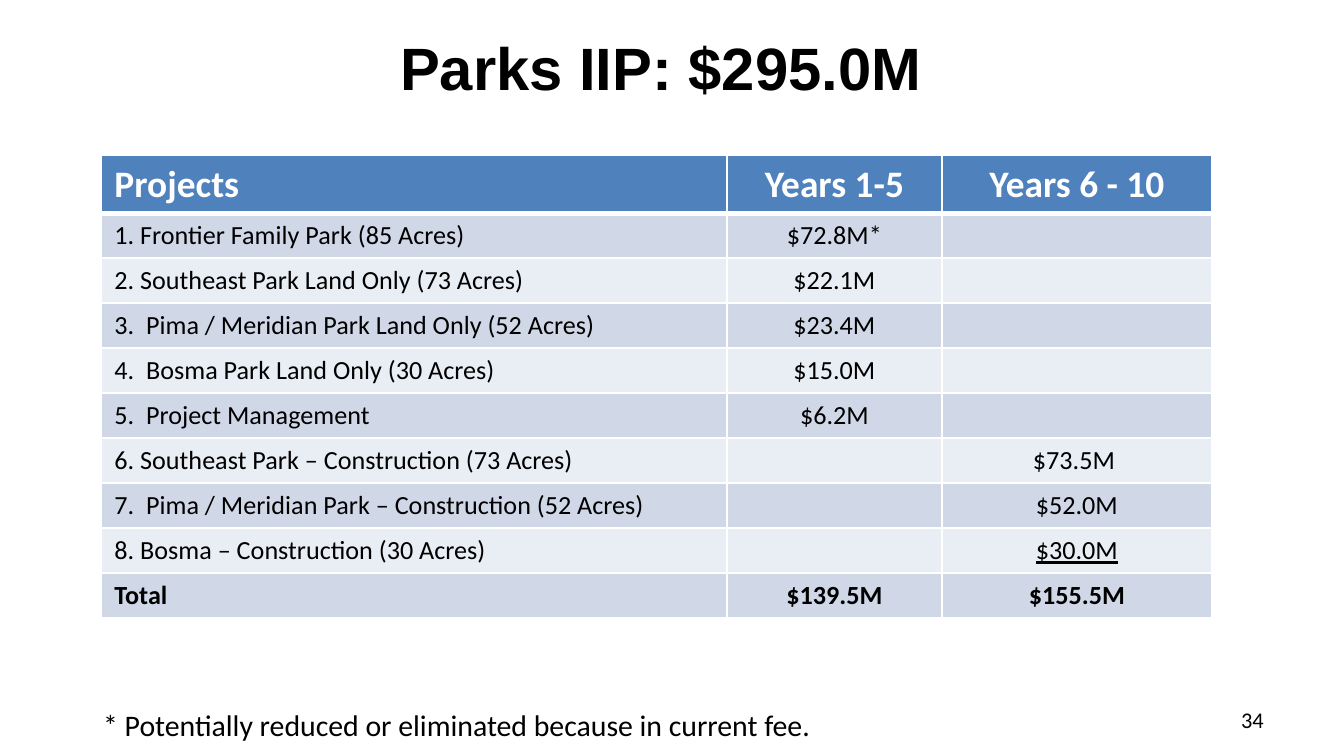
from lxml.etree import SubElement
from pptx import Presentation
from pptx.dml.color import RGBColor
from pptx.enum.text import MSO_ANCHOR, PP_ALIGN
from pptx.oxml.ns import qn
from pptx.util import Emu, Pt

EMU_PER_INCH = 914400
PX_PER_INCH = 134.4

BLACK, WHITE = "000000", "FFFFFF"
HEADER_BLUE = "4F81BD"
BANDS = ("D0D8E8", "E9EDF4")

HEADER_SIZE, PROJECT_SIZE = 20, 14
COLUMN_WIDTHS = (626, 215, 270)
HEADER_HEIGHT, PROJECT_HEIGHT = 58, 45

PROJECTS = [
    ("Projects", "Years 1-5", "Years 6 - 10"),
    ("1. Frontier Family Park (85 Acres)", "$72.8M*", ""),
    ("2. Southeast Park Land Only (73 Acres)", "$22.1M", ""),
    ("3.  Pima / Meridian Park Land Only (52 Acres)", "$23.4M", ""),
    ("4.  Bosma Park Land Only (30 Acres)", "$15.0M", ""),
    ("5.  Project Management", "$6.2M", ""),
    ("6. Southeast Park – Construction (73 Acres)", "", "$73.5M "),
    ("7.  Pima / Meridian Park – Construction (52 Acres)", "", "$52.0M"),
    ("8. Bosma – Construction (30 Acres)", "", "$30.0M"),
    ("Total", "$139.5M", "$155.5M"),
]
TOTAL_ROW = len(PROJECTS) - 1


def px(length):
    return Emu(round(length * EMU_PER_INCH / PX_PER_INCH))


def rgb(color):
    return RGBColor.from_string(color)


def add_run(paragraph, text, size, color=BLACK, bold=False, font="Calibri"):
    run = paragraph.add_run()
    run.text = text
    run.font.name = font
    run.font.size = Pt(size)
    run.font.bold = bold
    run.font.color.rgb = rgb(color)
    return run


def add_title(slide, text):
    title = slide.shapes.title
    title.left, title.top, title.width, title.height = px(34), px(4), px(1254), px(126)
    title.text_frame.vertical_anchor = MSO_ANCHOR.MIDDLE
    paragraph = title.text_frame.paragraphs[0]
    paragraph.alignment = PP_ALIGN.CENTER
    add_run(paragraph, text, 32, bold=True, font="Arial")


def add_label(slide, text, left, top, width, height, size, align=PP_ALIGN.LEFT, wrap=True):
    label = slide.shapes.add_textbox(px(left), px(top), px(width), px(height))
    label.text_frame.word_wrap = wrap
    paragraph = label.text_frame.paragraphs[0]
    paragraph.alignment = align
    add_run(paragraph, text, size)


def set_borders(cell, bottom_width):
    """Draw white lines around a cell; they must precede its fill in the XML."""
    properties = cell._tc.get_or_add_tcPr()
    for side, width in (("L", 1), ("R", 1), ("T", 1), ("B", bottom_width)):
        line = SubElement(properties, qn(f"a:ln{side}"), w=str(Pt(width)))
        fill = SubElement(line, qn("a:solidFill"))
        SubElement(fill, qn("a:srgbClr"), val=WHITE)


def fill_cell(cell, text, row, column):
    is_header = row == 0
    size = HEADER_SIZE if is_header else PROJECT_SIZE
    set_borders(cell, 3 if is_header else 1)
    cell.fill.solid()
    cell.fill.fore_color.rgb = rgb(HEADER_BLUE if is_header else BANDS[(row - 1) % 2])

    paragraph = cell.text_frame.paragraphs[0]
    paragraph.alignment = PP_ALIGN.CENTER if column else PP_ALIGN.LEFT
    if not text:
        # The end mark keeps an empty cell from stretching its row.
        SubElement(paragraph._p, qn("a:endParaRPr"), sz=str(size * 100))
        return
    run = add_run(paragraph, text, size, WHITE if is_header else BLACK,
                  bold=row in (0, TOTAL_ROW))
    if row == TOTAL_ROW - 1 and column == 2:
        run.font.underline = True


def add_project_table(slide):
    height = HEADER_HEIGHT + PROJECT_HEIGHT * TOTAL_ROW
    table = slide.shapes.add_table(
        len(PROJECTS), len(COLUMN_WIDTHS),
        px(101), px(155), px(sum(COLUMN_WIDTHS)), px(height),
    ).table
    for column, width in zip(table.columns, COLUMN_WIDTHS):
        column.width = px(width)
    for row, texts in enumerate(PROJECTS):
        table.rows[row].height = px(PROJECT_HEIGHT if row else HEADER_HEIGHT)
        for column, text in enumerate(texts):
            fill_cell(table.cell(row, column), text, row, column)


def main():
    deck = Presentation()
    deck.slide_width, deck.slide_height = px(1344), px(756)
    slide = deck.slides.add_slide(deck.slide_layouts[5])
    add_title(slide, "Parks IIP: $295.0M")
    add_label(slide, "34", 1079, 700, 198, 40, 12, align=PP_ALIGN.RIGHT)
    add_project_table(slide)
    add_label(slide, "* Potentially reduced or eliminated because in current fee.",
              90, 700, 765, 50, 16, wrap=False)
    deck.save("out.pptx")


if __name__ == "__main__":
    main()
